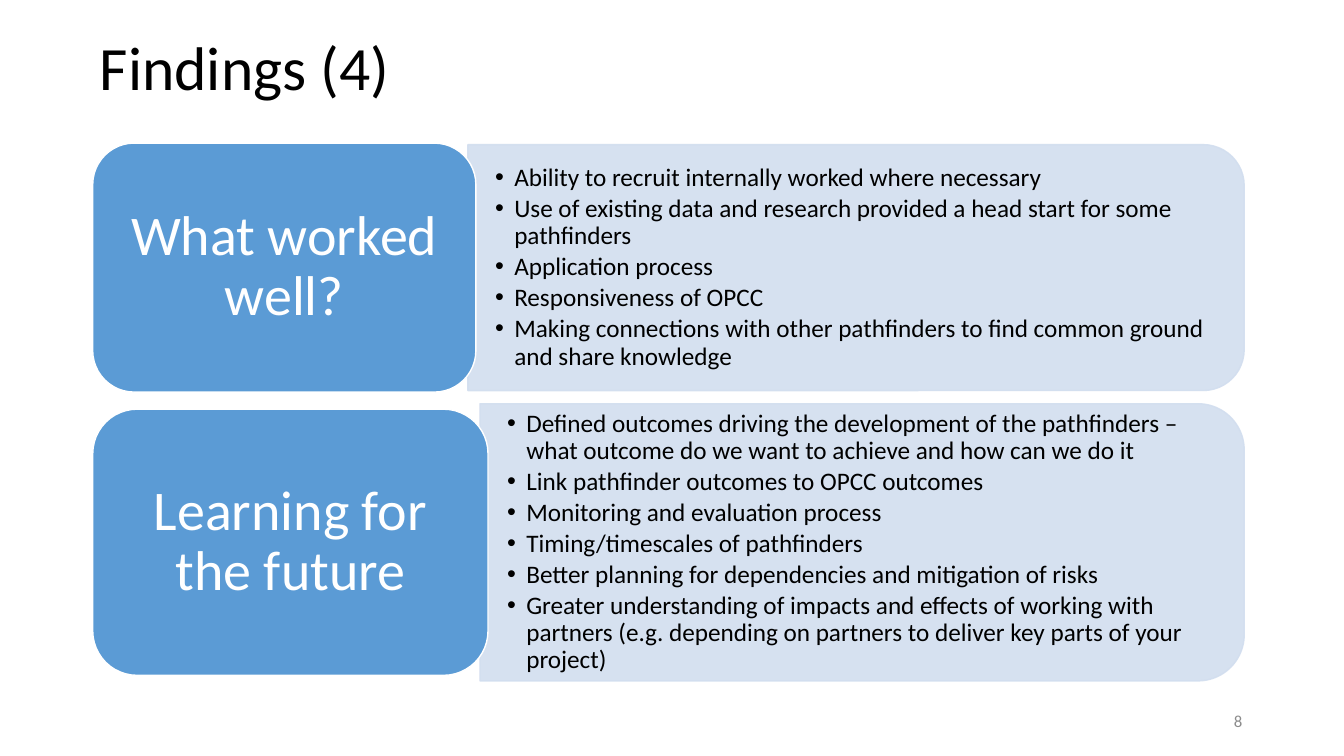
from lxml import etree
from pptx import Presentation
from pptx.dml.color import RGBColor
from pptx.enum.shapes import MSO_SHAPE
from pptx.enum.text import MSO_ANCHOR, MSO_AUTO_SIZE, PP_ALIGN
from pptx.oxml.ns import qn
from pptx.util import Inches, Pt

ROUND, ROUND_TOP = MSO_SHAPE.ROUNDED_RECTANGLE, MSO_SHAPE.ROUND_2_SAME_RECTANGLE
MIDDLE = MSO_ANCHOR.MIDDLE
LEFT, CENTER, RIGHT = PP_ALIGN.LEFT, PP_ALIGN.CENTER, PP_ALIGN.RIGHT

BLACK = RGBColor(0x00, 0x00, 0x00)
WHITE = RGBColor(0xFF, 0xFF, 0xFF)
BLUE = RGBColor(0x5B, 0x9B, 0xD5)
PALE_BLUE = RGBColor(0xD2, 0xDE, 0xEF)
GREY = RGBColor(0x8C, 0x8C, 0x8C)

FONT = "Calibri"
SLIDE_W, SLIDE_H = 13.33, 7.5
LABEL_LEFT = 0.92
PANEL_OVERLAP = 0.08
PANEL_INSET = 0.12
BULLET_INDENT = 0.19

# label box: top, width, height; panel: width, height; then the wording
FINDINGS = [
    ((1.42, 3.8, 2.47), (7.7, 2.44), "What worked well?", [
        "Ability to recruit internally worked where necessary",
        "Use of existing data and research provided a head start for some pathfinders",
        "Application process",
        "Responsiveness of OPCC",
        "Making connections with other pathfinders to find common ground and share knowledge",
    ]),
    ((4.06, 3.92, 2.64), (7.58, 2.75), "Learning for the future", [
        "Defined outcomes driving the development of the pathfinders – "
        "what outcome do we want to achieve and how can we do it",
        "Link pathfinder outcomes to OPCC outcomes",
        "Monitoring and evaluation process",
        "Timing/timescales of pathfinders",
        "Better planning for dependencies and mitigation of risks",
        "Greater understanding of impacts and effects of working with partners "
        "(e.g. depending on partners to deliver key parts of your project)",
    ]),
]


def place(shape, x, y, w, h):
    shape.left, shape.top, shape.width, shape.height = map(Inches, (x, y, w, h))


def set_frame(tf, side=0.1, end=0.05):
    tf.word_wrap = True
    tf.auto_size = MSO_AUTO_SIZE.NONE
    tf.vertical_anchor = MIDDLE
    tf.margin_left = tf.margin_right = Inches(side)
    tf.margin_top = tf.margin_bottom = Inches(end)


def write(p, text, size, color, align, spacing=0.9):
    p.alignment = align
    p.line_spacing = spacing
    p.space_before = Pt(0)
    r = p.add_run()
    r.text = text
    r.font.name, r.font.size, r.font.color.rgb = FONT, Pt(size), color


def add_bullet(p):
    pPr = p._p.get_or_add_pPr()
    pPr.set("marL", str(Inches(BULLET_INDENT)))
    pPr.set("indent", str(-Inches(BULLET_INDENT)))
    etree.SubElement(pPr, qn("a:buChar")).set("char", "•")


def add_box(s, kind, x, y, w, h, fill, line):
    sp = s.shapes.add_shape(kind, *map(Inches, (x, y, w, h)))
    sp.shadow.inherit = False
    sp.fill.solid()
    sp.fill.fore_color.rgb = fill
    sp.line.color.rgb = line
    sp.line.width = Pt(1)
    return sp


def add_panel(s, x, y, w, h):
    """Pale box with rounded right corners: a tall shape turned by 90 degrees."""
    sp = add_box(s, ROUND_TOP, x + (w - h) / 2, y + (h - w) / 2, h, w, PALE_BLUE, PALE_BLUE)
    sp.rotation = 90
    for color in sp.element.spPr.iter(qn("a:srgbClr")):
        etree.SubElement(color, qn("a:alpha")).set("val", "90000")
    return sp


def add_finding(s, body, label_box, panel_size, label, points):
    y, w, h = label_box
    panel_w, panel_h = panel_size
    x = LABEL_LEFT + w - PANEL_OVERLAP
    panel_y = y + (h - panel_h) / 2
    panel = add_panel(s, x, panel_y, panel_w, panel_h)

    place(body, x, panel_y + PANEL_INSET, panel_w - PANEL_INSET, panel_h - 2 * PANEL_INSET)
    panel.element.addnext(body.element)
    tf = body.text_frame
    set_frame(tf, 0.27, 0.14)
    for i, point in enumerate(points):
        p = tf.add_paragraph() if i else tf.paragraphs[0]
        write(p, point, 18, BLACK, LEFT)
        p.space_after = Pt(2.7)
        add_bullet(p)

    sp = add_box(s, ROUND, LABEL_LEFT, y, w, h, BLUE, WHITE)
    set_frame(sp.text_frame, 0.17, 0.08)
    write(sp.text_frame.paragraphs[0], label, 40, WHITE, CENTER)


def add_title(s, text):
    title = s.shapes.title
    place(title, 0.89, 0.26, 11.5, 0.87)
    set_frame(title.text_frame)
    write(title.text_frame.paragraphs[0], text, 44, BLACK, LEFT)


def add_page_number(s, number):
    tf = s.shapes.add_textbox(*map(Inches, (9.42, 6.95, 3, 0.4))).text_frame
    set_frame(tf)
    write(tf.paragraphs[0], number, 12, GREY, RIGHT, 1.0)


def main():
    prs = Presentation()
    prs.slide_width, prs.slide_height = Inches(SLIDE_W), Inches(SLIDE_H)
    s = prs.slides.add_slide(prs.slide_layouts.get_by_name("Two Content"))
    add_title(s, "Findings (4)")
    bodies = list(s.placeholders)[1:]
    for body, finding in zip(bodies, FINDINGS):
        add_finding(s, body, *finding)
    add_page_number(s, "8")
    prs.save("out.pptx")


if __name__ == "__main__":
    main()
